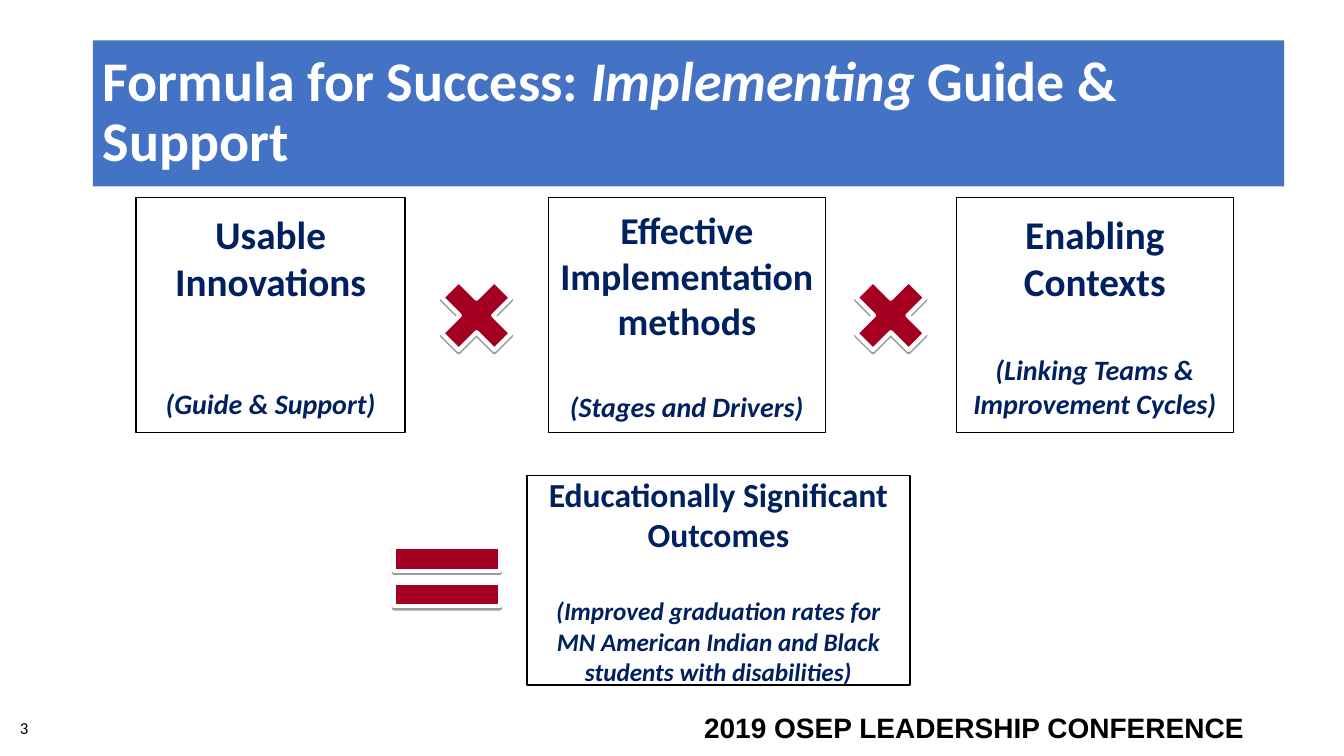
from dataclasses import dataclass

from lxml import etree
from pptx import Presentation
from pptx.dml.color import RGBColor
from pptx.enum.shapes import MSO_SHAPE as Preset
from pptx.enum.text import MSO_ANCHOR as Anchor
from pptx.enum.text import MSO_AUTO_SIZE as AutoSize
from pptx.enum.text import PP_ALIGN as Align
from pptx.oxml.ns import qn
from pptx.util import Cm, Pt

COLOURS = {
    "banner": "4472C4",
    "white": "FFFFFF",
    "black": "000000",
    "navy": "002060",
    "crimson": "A50021",
}
TITLE_ONLY = 5


@dataclass(frozen=True)
class Frame:
    left: float
    top: float
    width: float
    height: float

    def lengths(self) -> tuple:
        return tuple(Cm(v) for v in (self.left, self.top, self.width, self.height))


@dataclass(frozen=True)
class Term:
    """A box of the formula: heading, detail and the gap between them in points."""
    frame: Frame
    heading: str
    heading_size: float
    detail: str
    detail_size: float
    gap: float


@dataclass(frozen=True)
class Operator:
    frame: Frame
    preset: Preset


ROW_TOP, ROW_HEIGHT = 4.98, 5.92
TERMS = [
    Term(Frame(3.43, ROW_TOP, 6.78, ROW_HEIGHT),
         "Usable Innovations", 28, "(Guide & Support)", 20, 58.6),
    Term(Frame(13.82, ROW_TOP, 6.98, ROW_HEIGHT),
         "Effective Implementation methods", 27, "(Stages and Drivers)", 20, 33),
    Term(Frame(24.1, ROW_TOP, 6.98, ROW_HEIGHT),
         "Enabling Contexts", 28, "(Linking Teams & Improvement Cycles)", 20, 34.2),
    Term(Frame(13.28, 11.98, 9.65, 5.28),
         "Educationally Significant Outcomes", 24,
         "(Improved graduation rates for MN American Indian and Black "
         "students with disabilities)", 18, 29.3),
]
OPERATORS = [
    Operator(Frame(10.74, 6.68, 2.54, 2.54), Preset.MATH_MULTIPLY),
    Operator(Frame(21.18, 6.68, 2.54, 2.54), Preset.MATH_MULTIPLY),
    Operator(Frame(9.45, 13.26, 3.63, 2.54), Preset.MATH_EQUAL),
]


def colour(name: str) -> RGBColor:
    return RGBColor.from_string(COLOURS[name])


def set_attributes(target, formats: dict) -> None:
    for name, value in formats.items():
        setattr(target, name, value)


def add_span(para, text: str, size: float, ink: str, **formats) -> None:
    span = para.add_run()
    span.text = text
    set_attributes(span.font, {"name": "Calibri", "size": Pt(size), **formats})
    span.font.color.rgb = colour(ink)


def add_preset(slide, preset: Preset, frame: Frame, fill: str, line: str, weight: float):
    shape = slide.shapes.add_shape(preset, *frame.lengths())
    shape.shadow.inherit = False
    shape.fill.solid()
    shape.fill.fore_color.rgb = colour(fill)
    shape.line.color.rgb = colour(line)
    shape.line.width = Pt(weight)
    return shape


def add_term(slide, term: Term) -> None:
    box = add_preset(slide, Preset.RECTANGLE, term.frame, "white", "black", 1)
    text = box.text_frame
    set_attributes(text, {"word_wrap": True, "vertical_anchor": Anchor.MIDDLE})
    heading = text.paragraphs[0]
    detail = text.add_paragraph()
    heading.alignment = detail.alignment = Align.CENTER
    detail.space_before = Pt(term.gap)
    add_span(heading, term.heading, term.heading_size, "navy", bold=True)
    add_span(detail, term.detail, term.detail_size, "navy", bold=True, italic=True)


def add_operator(slide, operator: Operator) -> None:
    """Draw a sign with a white rim and a thin shadow below it."""
    sign = add_preset(slide, operator.preset, operator.frame, "crimson", "white", 3)
    effects = sign.element.spPr.find(qn("a:effectLst"))
    shadow = etree.SubElement(effects, qn("a:outerShdw"), blurRad="0",
                              dist=str(Pt(1.6)), dir="5400000", rotWithShape="0")
    shade = etree.SubElement(shadow, qn("a:srgbClr"), val=COLOURS["black"])
    etree.SubElement(shade, qn("a:alpha"), val="38000")


def fill_title(slide) -> None:
    title = slide.shapes.title
    frame = Frame(2.34, 1.02, 30.02, 3.68)
    set_attributes(title, dict(zip(("left", "top", "width", "height"), frame.lengths())))
    title.fill.solid()
    title.fill.fore_color.rgb = colour("banner")
    set_attributes(title.text_frame, {"word_wrap": True, "auto_size": AutoSize.NONE,
                                      "vertical_anchor": Anchor.MIDDLE})
    para = title.text_frame.paragraphs[0]
    set_attributes(para, {"alignment": Align.LEFT, "line_spacing": 0.9})
    for text, italic in (("Formula for Success: ", False), ("Implementing", True),
                         (" Guide & Support", False)):
        add_span(para, text, 40, "white", bold=True, italic=italic)


def add_label(slide, frame: Frame, text: str, size: float, align: Align,
              anchor: Anchor, **formats) -> None:
    box = slide.shapes.add_textbox(*frame.lengths())
    set_attributes(box.text_frame, {"word_wrap": True, "vertical_anchor": anchor})
    para = box.text_frame.paragraphs[0]
    para.alignment = align
    add_span(para, text, size, "black", **formats)


def main() -> None:
    deck = Presentation()
    set_attributes(deck, {"slide_width": Cm(33.87), "slide_height": Cm(19.05)})
    page = deck.slides.add_slide(deck.slide_layouts[TITLE_ONLY])
    add_label(page, Frame(16.93, 17.78, 14.67, 1.12), "2019 OSEP LEADERSHIP CONFERENCE",
              20, Align.RIGHT, Anchor.TOP, name="Arial", bold=True)
    fill_title(page)
    for term in TERMS:
        add_term(page, term)
    for operator in OPERATORS:
        add_operator(page, operator)
    add_label(page, Frame(0.25, 17.83, 7.62, 1.02), "3", 12, Align.LEFT, Anchor.MIDDLE)
    deck.save("out.pptx")


if __name__ == "__main__":
    main()
